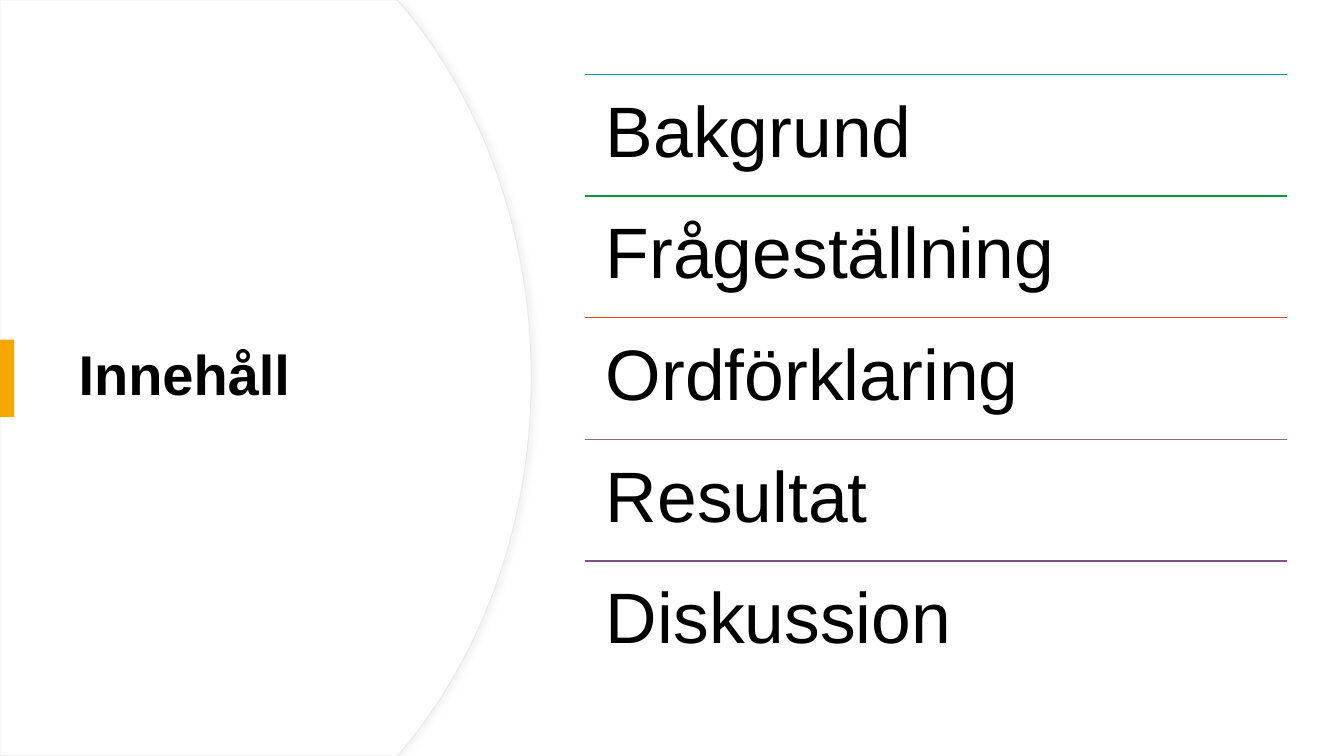
from dataclasses import dataclass

from lxml import etree
from pptx import Presentation
from pptx.dml.color import RGBColor
from pptx.enum.shapes import MSO_CONNECTOR, MSO_SHAPE
from pptx.enum.text import MSO_ANCHOR, MSO_AUTO_SIZE, PP_ALIGN
from pptx.oxml.ns import qn
from pptx.util import Inches, Pt

HEADING = "Innehåll"
TOPICS = [
    ("Bakgrund", "00A5AB"),
    ("Frågeställning", "09963B"),
    ("Ordförklaring", "E64823"),
    ("Resultat", "9C6A6A"),
    ("Diskussion", "824F8C"),
]


@dataclass(frozen=True)
class Theme:
    font: str = "Arial"
    heading_size: float = 40
    topic_size: float = 51
    rule_width: float = 1
    edge_width: float = 0.75
    text: str = "000000"
    surface: str = "FFFFFF"
    edge: str = "E9E9E9"
    shadow: str = "D9D9D9"
    accent: str = "F5A700"


THEME = Theme()
WIDTH, HEIGHT = 13.33, 7.5
MIDDLE = HEIGHT / 2
LIST_LEFT, LIST_TOP, LIST_WIDTH = 5.8, 0.74, 6.96
ROW_HEIGHT = 6.03 / len(TOPICS)
TOPIC_INSET = 0.21
ACCENT_WIDTH, ACCENT_TOP, ACCENT_HEIGHT = 0.14, 3.37, 0.77
HEADING_BOX = (0.68, 1.27, 3.94, 4.95)
# Upper half of the panel's curved edge: corner, then a cubic curve to the middle
PANEL_CORNER = (3.94, 0)
PANEL_CURVE = [(4.01, 0.08), (4.79, 1.02), (5.27, 2.32), (5.27, MIDDLE)]
CURVE_STEPS = 40


def color(value):
    return RGBColor.from_string(value)


def write(paragraph, wording, size, bold=False):
    paragraph.line_spacing = 0.9
    paragraph.alignment = PP_ALIGN.LEFT
    run = paragraph.add_run()
    run.text = wording
    run.font.name = THEME.font
    run.font.size = Pt(size)
    run.font.bold = bold
    run.font.color.rgb = color(THEME.text)


def cubic_point(controls, t):
    weights = ((1 - t) ** 3, 3 * t * (1 - t) ** 2, 3 * t**2 * (1 - t), t**3)
    return tuple(sum(w * c[axis] for w, c in zip(weights, controls)) for axis in (0, 1))


def add_soft_shadow(shape):
    effects = shape._element.spPr.get_or_add_effectLst() if hasattr(
        shape._element.spPr, "get_or_add_effectLst"
    ) else etree.SubElement(shape._element.spPr, qn("a:effectLst"))
    shadow = etree.SubElement(
        effects, qn("a:outerShdw"), blurRad=str(Pt(4)), dist=str(Pt(3)), dir="0"
    )
    tint = etree.SubElement(shadow, qn("a:srgbClr"), val=THEME.shadow)
    etree.SubElement(tint, qn("a:alpha"), val="30000")


def add_panel(slide):
    upper = [PANEL_CORNER] + [
        cubic_point(PANEL_CURVE, step / CURVE_STEPS) for step in range(CURVE_STEPS + 1)
    ]
    lower = [(x, HEIGHT - y) for x, y in reversed(upper[:-1])]
    outline = [(Inches(x), Inches(y)) for x, y in upper + lower + [(0, HEIGHT)]]
    builder = slide.shapes.build_freeform(0, 0)
    builder.add_line_segments(outline, close=True)
    panel = builder.convert_to_shape()
    panel.fill.solid()
    panel.fill.fore_color.rgb = color(THEME.surface)
    panel.line.color.rgb = color(THEME.edge)
    panel.line.width = Pt(THEME.edge_width)
    add_soft_shadow(panel)
    return panel


def add_heading(slide):
    heading = slide.shapes.title
    heading.left, heading.top, heading.width, heading.height = map(Inches, HEADING_BOX)
    frame = heading.text_frame
    frame.word_wrap = True
    frame.auto_size = MSO_AUTO_SIZE.NONE
    frame.vertical_anchor = MSO_ANCHOR.MIDDLE
    write(frame.paragraphs[0], HEADING, THEME.heading_size, bold=True)
    return heading


def add_accent(slide):
    accent = slide.shapes.add_shape(
        MSO_SHAPE.RECTANGLE, 0, Inches(ACCENT_TOP), Inches(ACCENT_WIDTH), Inches(ACCENT_HEIGHT)
    )
    accent.shadow.inherit = False
    accent.fill.solid()
    accent.fill.fore_color.rgb = color(THEME.accent)
    accent.line.fill.background()


def add_topic(slide, row, wording, rule_color):
    left, top = Inches(LIST_LEFT), Inches(LIST_TOP + row * ROW_HEIGHT)
    width = Inches(LIST_WIDTH)
    rule = slide.shapes.add_connector(MSO_CONNECTOR.STRAIGHT, left, top, left + width, top)
    rule.line.color.rgb = color(rule_color)
    rule.line.width = Pt(THEME.rule_width)
    etree.SubElement(rule._element.spPr, qn("a:effectLst"))

    frame = slide.shapes.add_textbox(left, top, width, Inches(ROW_HEIGHT)).text_frame
    frame.word_wrap = True
    frame.vertical_anchor = MSO_ANCHOR.TOP
    frame.margin_left = frame.margin_right = Inches(TOPIC_INSET)
    frame.margin_top = frame.margin_bottom = Inches(TOPIC_INSET)
    write(frame.paragraphs[0], wording, THEME.topic_size)


def main():
    deck = Presentation()
    deck.slide_width, deck.slide_height = Inches(WIDTH), Inches(HEIGHT)
    slide = deck.slides.add_slide(deck.slide_layouts.get_by_name("Title Only"))
    slide.background.fill.solid()
    slide.background.fill.fore_color.rgb = color(THEME.surface)

    heading = add_heading(slide)
    heading._element.addprevious(add_panel(slide)._element)
    add_accent(slide)
    for row, (wording, rule_color) in enumerate(TOPICS):
        add_topic(slide, row, wording, rule_color)
    deck.save("out.pptx")


if __name__ == "__main__":
    main()
